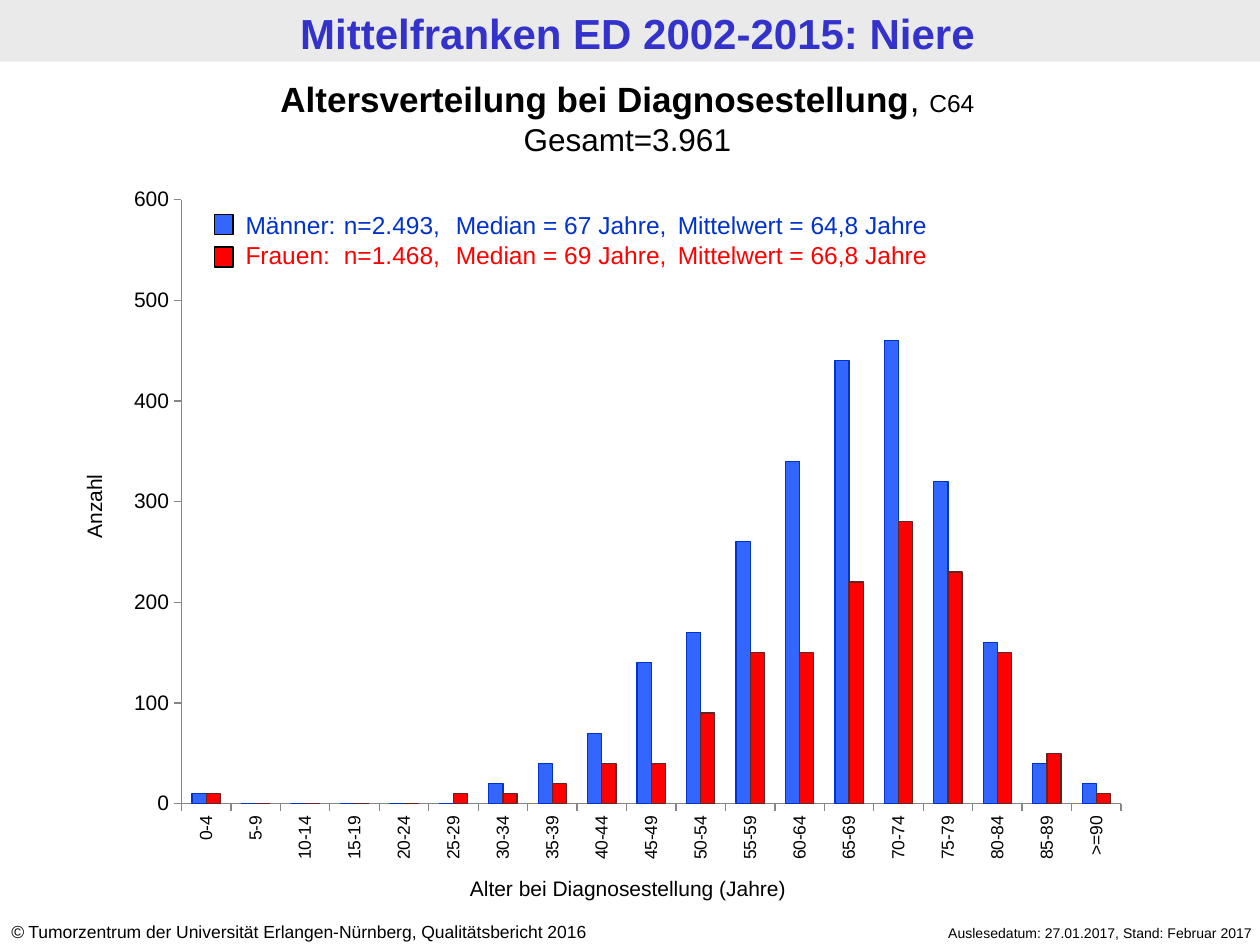
from dataclasses import dataclass

import pptx
import pptx.chart.data
import pptx.dml.color
import pptx.enum.chart
import pptx.enum.shapes
import pptx.enum.text
import pptx.oxml
import pptx.oxml.ns
import pptx.util

Pt = pptx.util.Pt
LEFT, CENTER, RIGHT = (
    pptx.enum.text.PP_ALIGN.LEFT,
    pptx.enum.text.PP_ALIGN.CENTER,
    pptx.enum.text.PP_ALIGN.RIGHT,
)


@dataclass(frozen=True)
class Theme:
    font: str = "Arial"
    ink: str = "000000"
    heading: str = "3333CC"
    band: str = "EAEAEA"
    paper: str = "FFFFFF"
    axis: str = "868686"
    title: float = 24
    subtitle: float = 20
    total: float = 18
    legend: float = 14
    label: float = 12
    small: float = 10
    note: float = 8


@dataclass(frozen=True)
class Box:
    left: float
    top: float
    width: float
    height: float

    def lengths(self) -> tuple:
        return Pt(self.left), Pt(self.top), Pt(self.width), Pt(self.height)


@dataclass(frozen=True)
class Group:
    name: str
    fill: str
    outline: str
    text_color: str
    swatch_top: float
    summary: str
    counts: tuple


THEME = Theme()
AGES = [f"{start}-{start + 4}" for start in range(0, 90, 5)] + [">=90"]
GROUPS = (
    Group("Männer", "3366FF", "0033CC", "0033CC", 122.4,
          "Männer: \tn=2.493, \tMedian = 67 Jahre, \tMittelwert = 64,8 Jahre",
          (10, 0, 0, 0, 0, 0, 20, 40, 70, 140, 170, 260, 340, 440, 460,
           320, 160, 40, 20)),
    Group("Frauen", "FF0000", "632523", "FF0000", 141.1,
          "Frauen: \tn=1.468, \tMedian = 69 Jahre,\tMittelwert = 66,8 Jahre",
          (10, 0, 0, 0, 0, 10, 10, 20, 40, 40, 90, 150, 150, 220, 280,
           230, 150, 50, 10)),
)
LEGEND_TABS = (56.2, 63.4, 120.2, 247)


def rgb(color: str) -> pptx.dml.color.RGBColor:
    return pptx.dml.color.RGBColor.from_string(color)


def style(font, size: float, color: str = THEME.ink, bold: bool = False,
          italic: bool = False) -> None:
    font.name = THEME.font
    font.size = Pt(size)
    font.bold = bold
    font.italic = italic
    font.color.rgb = rgb(color)


def write(paragraph, text: str, align=LEFT, **font_format) -> None:
    paragraph.alignment = align
    run = paragraph.add_run()
    run.text = text
    style(run.font, **font_format)


def add_text_frame(slide, box: Box, rotation: float = 0):
    holder = slide.shapes.add_textbox(*box.lengths())
    holder.rotation = rotation
    holder.text_frame.word_wrap = True
    return holder.text_frame


def add_rectangle(slide, box: Box, fill: str, outline: str | None = None):
    rectangle = slide.shapes.add_shape(
        pptx.enum.shapes.MSO_SHAPE.RECTANGLE, *box.lengths())
    rectangle.shadow.inherit = False
    rectangle.fill.solid()
    rectangle.fill.fore_color.rgb = rgb(fill)
    if outline:
        rectangle.line.color.rgb = rgb(outline)
        rectangle.line.width = Pt(0.75)
    else:
        rectangle.line.fill.background()
    return rectangle


def add_tabs(paragraph, positions: tuple) -> None:
    tab_list = pptx.oxml.parse_xml(
        f"<a:tabLst {pptx.oxml.ns.nsdecls('a')}>"
        + "".join(f'<a:tab pos="{Pt(p)}" algn="l"/>' for p in positions)
        + "</a:tabLst>")
    paragraph._p.get_or_add_pPr().append(tab_list)


def set_axis(axis, size: float) -> None:
    axis.has_major_gridlines = False
    axis.major_tick_mark = pptx.enum.chart.XL_TICK_MARK.OUTSIDE
    axis.minor_tick_mark = pptx.enum.chart.XL_TICK_MARK.NONE
    axis.format.line.color.rgb = rgb(THEME.axis)
    axis.format.line.width = Pt(0.75)
    style(axis.tick_labels.font, size)


def add_age_chart(slide, box: Box) -> None:
    data = pptx.chart.data.CategoryChartData(number_format="0")
    data.categories = AGES
    for group in GROUPS:
        data.add_series(group.name, group.counts)
    chart = slide.shapes.add_chart(
        pptx.enum.chart.XL_CHART_TYPE.COLUMN_CLUSTERED, *box.lengths(), data).chart
    chart.has_legend = False
    chart.has_title = False
    style(chart.font, THEME.label)

    # Axes, with upright age labels
    set_axis(chart.category_axis, THEME.small)
    set_axis(chart.value_axis, THEME.label)
    chart.value_axis.minimum_scale = 0
    chart.value_axis.maximum_scale = 600
    chart.value_axis.major_unit = 100
    age_labels = chart.category_axis._element.find(
        ".//" + pptx.oxml.ns.qn("a:bodyPr"))
    age_labels.set("rot", "-5400000")
    age_labels.set("vert", "horz")

    # Bars
    plot = chart.plots[0]
    plot.gap_width = 150
    plot.overlap = 0
    plot.vary_by_categories = False
    for series, group in zip(plot.series, GROUPS):
        series.invert_if_negative = False
        series.format.fill.solid()
        series.format.fill.fore_color.rgb = rgb(group.fill)
        series.format.line.color.rgb = rgb(group.outline)
        series.format.line.width = Pt(0.75)

    # Fixed plot area on white
    plot_area = chart._chartSpace.chart.plotArea
    for layout in plot_area.findall(pptx.oxml.ns.qn("c:layout")):
        plot_area.remove(layout)
    plot_area.insert(0, pptx.oxml.parse_xml(
        f"<c:layout {pptx.oxml.ns.nsdecls('c')}><c:manualLayout>"
        '<c:layoutTarget val="inner"/><c:xMode val="edge"/><c:yMode val="edge"/>'
        '<c:x val="0.065"/><c:y val="0.035"/><c:w val="0.914"/><c:h val="0.864"/>'
        "</c:manualLayout></c:layout>"))
    plot_area.append(pptx.oxml.parse_xml(
        f"<c:spPr {pptx.oxml.ns.nsdecls('c', 'a')}><a:solidFill>"
        f'<a:srgbClr val="{THEME.paper}"/></a:solidFill></c:spPr>'))


def main() -> None:
    deck = pptx.Presentation()
    deck.slide_width, deck.slide_height = Pt(720), Pt(540)
    slide = deck.slides.add_slide(deck.slide_layouts[5])

    # Title on its band, the band moved to the back
    band = add_rectangle(slide, Box(0, 0, 720, 35.3), THEME.band)
    slide.shapes._spTree.insert(2, band._element)
    title = slide.shapes.title
    title.left, title.top, title.width, title.height = Box(4.3, 0.7, 720, 35.3).lengths()
    title.text_frame.vertical_anchor = pptx.enum.text.MSO_ANCHOR.TOP
    title.text_frame.auto_size = pptx.enum.text.MSO_AUTO_SIZE.NONE
    write(title.text_frame.paragraphs[0], "Mittelfranken ED 2002-2015: Niere",
          align=CENTER, size=THEME.title, color=THEME.heading, bold=True)

    # Footer
    copyright_line = add_text_frame(slide, Box(-0.7, 522.7, 377.3, 19.4)).paragraphs[0]
    write(copyright_line, "©", size=THEME.small, italic=True)
    write(copyright_line,
          " Tumorzentrum der Universität Erlangen-Nürnberg, Qualitätsbericht 2016",
          size=THEME.small)
    write(add_text_frame(slide, Box(478.8, 524.9, 244, 17.3)).paragraphs[0],
          "Auslesedatum: 27.01.2017, Stand: Februar 2017",
          align=RIGHT, size=THEME.note)

    add_age_chart(slide, Box(65.5, 100.1, 587.5, 399.6))

    # Chart heading
    heading = add_text_frame(slide, Box(-2.9, 41, 722.9, 53.3))
    topic = heading.paragraphs[0]
    write(topic, "Altersverteilung bei Diagnosestellung", align=CENTER,
          size=THEME.subtitle, bold=True)
    write(topic, ", ", align=CENTER, size=THEME.subtitle)
    write(topic, "C64", align=CENTER, size=THEME.legend)
    write(heading.add_paragraph(), "Gesamt=3.961", align=CENTER, size=THEME.total)

    # Legend with key figures
    legend = add_text_frame(slide, Box(133.2, 116.6, 493.2, 41))
    for index, group in enumerate(GROUPS):
        row = legend.add_paragraph() if index else legend.paragraphs[0]
        add_tabs(row, LEGEND_TABS)
        write(row, group.summary, size=THEME.legend, color=group.text_color)
        add_rectangle(slide, Box(122.4, group.swatch_top, 10.8, 11.5),
                      group.fill, THEME.ink)

    # Axis names
    for name, box, rotation in (
        ("Alter bei Diagnosestellung (Jahre)", Box(248.4, 496.8, 221, 21.6), 0),
        ("Anzahl", Box(-40.3, 278.6, 187.9, 21.6), 270),
    ):
        write(add_text_frame(slide, box, rotation).paragraphs[0], name,
              align=CENTER, size=THEME.label)

    deck.save("out.pptx")


if __name__ == "__main__":
    main()
